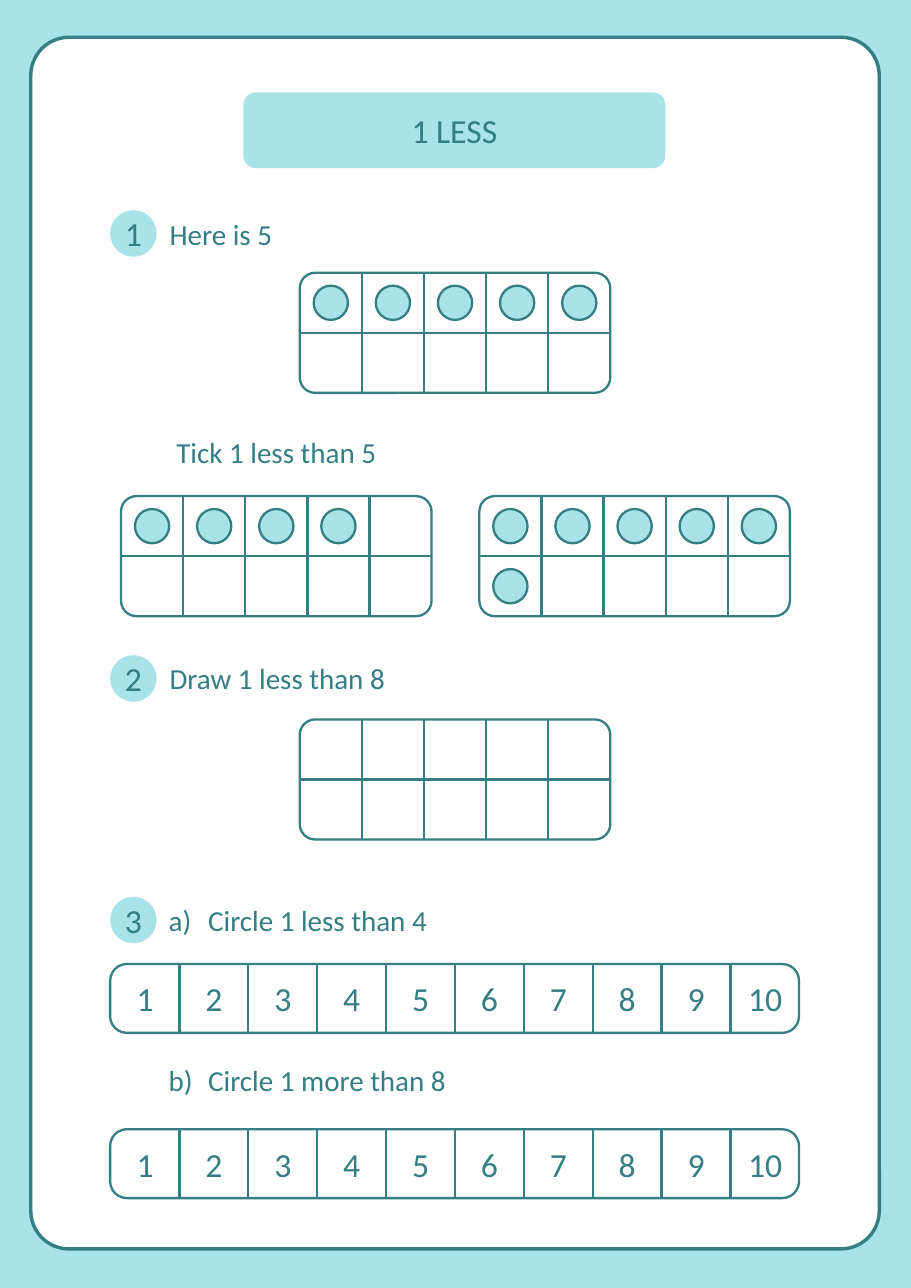
from pptx import Presentation
from pptx.dml.color import RGBColor
from pptx.enum.shapes import MSO_CONNECTOR, MSO_SHAPE as Kind
from pptx.enum.text import MSO_ANCHOR as Anchor, PP_ALIGN as Align
from pptx.oxml.ns import qn
from pptx.util import Cm, Pt
from lxml.etree import SubElement

TEAL = "347E84"
AQUA = "A7E3E8"
WHITE = "FFFFFF"


def hue(code):
    return RGBColor.from_string(code)


def put(kind, x, y, w, h, fill=None, line=0, curve=None, text="",
        size=22, align=Align.CENTER, anchor=Anchor.MIDDLE):
    box = [Cm(n) for n in (x, y, w, h)]
    if kind is None:
        item = slide.shapes.add_textbox(*box)
    else:
        item = slide.shapes.add_shape(kind, *box)
        item.shadow.inherit = False
    if curve is not None:
        item.adjustments[0] = curve
    if fill:
        item.fill.solid()
        item.fill.fore_color.rgb = hue(fill)
    else:
        item.fill.background()
    if line:
        item.line.color.rgb = hue(TEAL)
        item.line.width = Pt(line)
    else:
        item.line.fill.background()
    if text:
        frame = item.text_frame
        frame.word_wrap = True
        frame.vertical_anchor = anchor
        frame.margin_left = frame.margin_right = 0
        frame.margin_top = frame.margin_bottom = 0
        frame.text = text
        para = frame.paragraphs[0]
        para.alignment = align
        font = para.runs[0].font
        font.name = "Calibri"
        font.size = Pt(size)
        font.color.rgb = hue(TEAL)


deck = Presentation()
deck.slide_width = Cm(21)
deck.slide_height = Cm(29.7)
slide = deck.slides.add_slide(deck.slide_layouts[6])

put(Kind.RECTANGLE, 0, 0, 21, 29.7, AQUA)
put(Kind.ROUNDED_RECTANGLE, 0.71, 0.86, 19.56, 27.94, WHITE, 2.25, 0.045)
put(Kind.ROUNDED_RECTANGLE, 5.61, 2.13, 9.73, 1.75, AQUA, curve=0.167, text="1 LESS")

for num, y in enumerate((4.85, 15.11, 20.68), 1):
    put(Kind.OVAL, 2.54, y, 1.07, 1.07, AQUA, text=str(num))

labels = [
    ("Here is 5", 3.91, 5, 10.34, Align.LEFT),
    ("Tick 1 less than 5", 2.79, 10.03, 7.16, Align.CENTER),
    ("Draw 1 less than 8", 3.91, 15.24, 10.34, Align.LEFT),
    ("a)", 3.89, 20.81, 0.91, Align.LEFT),
    ("Circle 1 less than 4", 4.8, 20.81, 10.34, Align.LEFT),
    ("b)", 3.89, 24.51, 0.91, Align.LEFT),
    ("Circle 1 more than 8", 4.8, 24.51, 10.34, Align.LEFT),
]
for text, x, y, w, align in labels:
    put(None, x, y, w, 0.81, text=text, size=19, align=align, anchor=Anchor.TOP)

wide, high, dot = 7.16, 2.77, 0.79
col, row = wide / 5, high / 2
frames = [(6.91, 6.29, 5), (2.79, 11.44, 4), (11.05, 11.44, 6), (6.91, 16.59, 0)]
for x, y, count in frames:
    put(Kind.ROUNDED_RECTANGLE, x, y, wide, high, line=1.5, curve=0.129)
    rules = [(x, y + row, x + wide, y + row)]
    rules += [(x + n * col, y, x + n * col, y + high) for n in range(1, 5)]
    for ends in rules:
        rule = slide.shapes.add_connector(MSO_CONNECTOR.STRAIGHT, *[Cm(n) for n in ends])
        rule.line.color.rgb = hue(TEAL)
        rule.line.width = Pt(1.5)
        SubElement(rule.element.spPr, qn("a:effectLst"))
    for n in range(count):
        left = x + n % 5 * col + (col - dot) / 2
        top = y + n // 5 * row + (row - dot) / 2
        put(Kind.OVAL, left, top, dot, dot, AQUA, 1.5)

cell = 1.588
for y in (22.23, 26.04):
    put(Kind.ROUNDED_RECTANGLE, 2.54, y, 10 * cell, cell, line=1.5, curve=0.243)
    for num in range(1, 11):
        boxed = num in (2, 4, 6, 8, 9)
        put(Kind.RECTANGLE if boxed else None, 2.55 + (num - 1) * cell, y, cell, cell,
            line=1.5 if boxed else 0, text=str(num))

deck.save("out.pptx")
